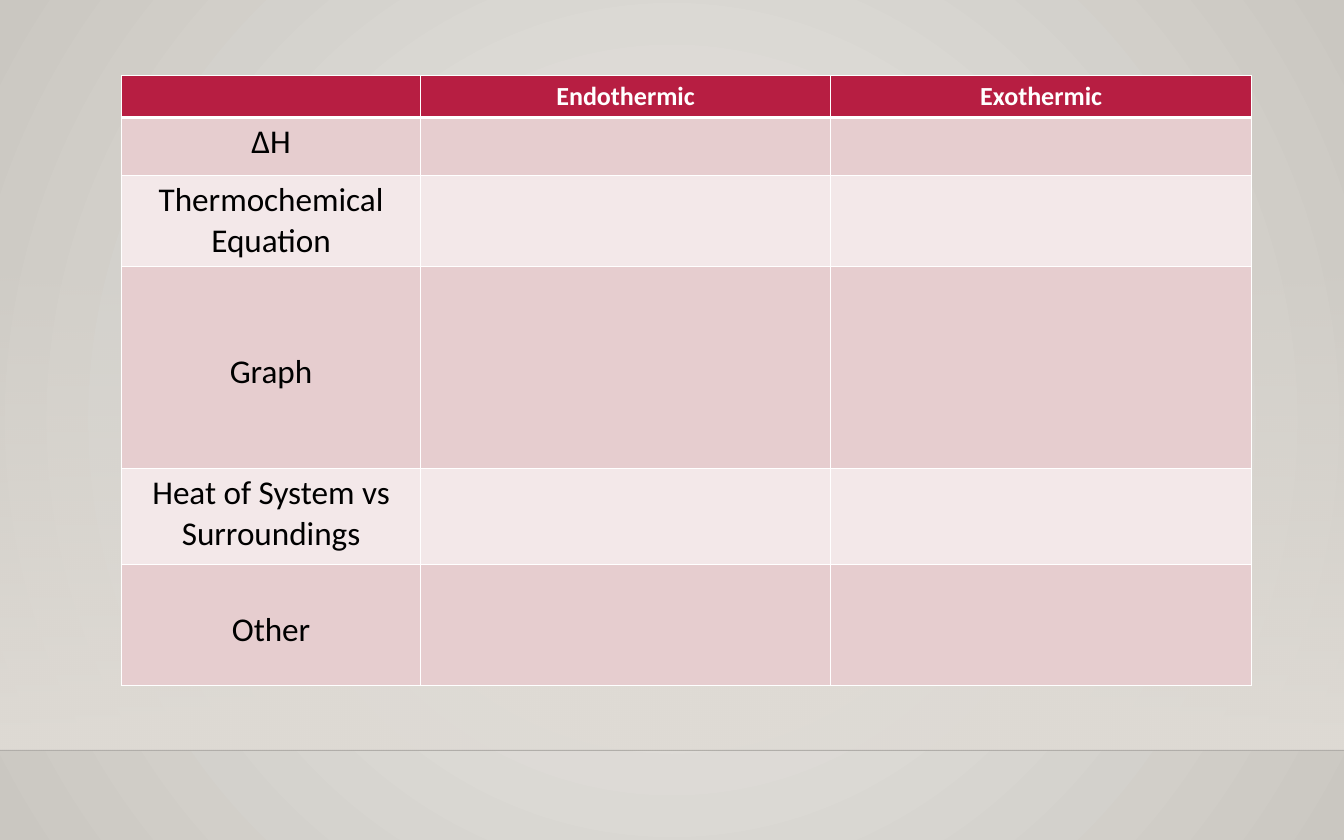
from pptx import Presentation
from pptx.dml.color import RGBColor
from pptx.enum import shapes, text
from pptx.oxml import parse_xml
from pptx.oxml import ns
from pptx.util import Pt

WIDTH, HEIGHT = 1134, 708.5
FLOOR = 632.9
COLUMNS = [252, 346.3, 355]
ROWS = [34.56, 48.96, 66.96, 169.92, 81.36, 102.24]
LINE_HEIGHT = 34
# Row label and how many lines it sits below the top of its cell
LABELS = [("∆H", 0), ("Thermochemical Equation", 0), ("Graph", 2),
          ("Heat of System vs Surroundings", 0), ("Other", 1)]


def rgb(value):
    return RGBColor.from_string(value)


def element(xml):
    """Parse a fragment with the a: prefix whose outer tag is not self-closing."""
    return parse_xml(xml.replace(">", f" {ns.nsdecls('a')}>", 1))


class Slide:
    font = "Calibri"
    header, bands = "B71E42", ("E6CDCF", "F3E8E9")

    def __init__(self, prs):
        self.s = prs.slides.add_slide(prs.slide_layouts[6])

    def gradient(self, parent, stops, direction):
        """Replace the solid fill in parent with (position, colour, opacity) stops."""
        gs = "".join(
            f'<a:gs pos="{pos * 1000}"><a:srgbClr val="{color}">'
            f'<a:alpha val="{alpha * 1000}"/></a:srgbClr></a:gs>'
            for pos, color, alpha in stops)
        fill = element(f"<a:gradFill><a:gsLst>{gs}</a:gsLst>{direction}</a:gradFill>")
        parent.replace(parent.find(ns.qn("a:solidFill")), fill)

    def background(self, inner, outer):
        self.s.background.fill.solid()
        self.gradient(
            self.s.element.find(".//" + ns.qn("p:bgPr")),
            [(0, inner, 100), (100, outer, 100)],
            '<a:path path="circle">'
            '<a:fillToRect l="50000" t="50000" r="50000" b="50000"/></a:path>')

    def fade(self, x, y, w, h, color):
        """Rectangle that fades from clear at the top to solid at the bottom."""
        sp = self.s.shapes.add_shape(
            shapes.MSO_SHAPE.RECTANGLE, Pt(x), Pt(y), Pt(w), Pt(h))
        sp.shadow.inherit = False
        sp.line.fill.background()
        sp.fill.solid()
        self.gradient(sp.element.spPr, [(0, color, 0), (100, color, 100)],
                      '<a:lin ang="5400000" scaled="0"/>')

    def rule(self, x1, y1, x2, y2, color, opacity):
        line = self.s.shapes.add_connector(
            shapes.MSO_CONNECTOR.STRAIGHT, Pt(x1), Pt(y1), Pt(x2), Pt(y2))
        line.line.width = Pt(1)
        line.line.color.rgb = rgb(color)
        spPr = line.line._get_or_add_ln().getparent()
        clr = spPr.find(".//" + ns.qn("a:srgbClr"))
        clr.append(element(f'<a:alpha val="{opacity * 1000}"></a:alpha>'))
        spPr.append(element("<a:effectLst></a:effectLst>"))

    def table(self, x, y, columns, rows):
        table = self.s.shapes.add_table(
            len(rows), len(columns), Pt(x), Pt(y),
            Pt(sum(columns)), Pt(sum(rows))).table
        for column, width in zip(table.columns, columns):
            column.width = Pt(width)
        for i, (row, height) in enumerate(zip(table.rows, rows)):
            row.height = Pt(height)
            for cell in row.cells:
                self.borders(cell, top=3 if i == 1 else 1, bottom=3 if i == 0 else 1)
                cell.fill.solid()
                cell.fill.fore_color.rgb = rgb(self.bands[(i - 1) % 2] if i else self.header)
        return table

    def borders(self, cell, top, bottom):
        tcPr = cell._tc.get_or_add_tcPr()
        for side, width in zip("LRTB", (1, 1, top, bottom)):
            tcPr.append(element(
                f'<a:ln{side} w="{Pt(width)}"><a:solidFill>'
                f'<a:srgbClr val="FFFFFF"/></a:solidFill></a:ln{side}>'))

    def label(self, cell, words, size, color, bold=False, lines_down=0):
        cell.margin_left = cell.margin_right = Pt(8.64)
        cell.margin_top = Pt(4.32 + lines_down * LINE_HEIGHT)
        cell.margin_bottom = Pt(4.32)
        p = cell.text_frame.paragraphs[0]
        p.alignment = text.PP_ALIGN.CENTER
        r = p.add_run()
        r.text = words
        r.font.name, r.font.size, r.font.bold = self.font, Pt(size), bold
        r.font.color.rgb = rgb(color)


def main():
    prs = Presentation()
    prs.slide_width, prs.slide_height = Pt(WIDTH), Pt(HEIGHT)
    slide = Slide(prs)
    slide.background("ECEAE7", "CAC7C1")
    slide.fade(0, 208.8, WIDTH, FLOOR - 208.8, "DFDBD5")
    slide.rule(0, FLOOR, WIDTH, FLOOR, "000001", 20)

    table = slide.table(102.7, 63.4, COLUMNS, ROWS)
    for j, words in enumerate(["Endothermic", "Exothermic"], 1):
        slide.label(table.cell(0, j), words, 22, "FFFFFF", bold=True)
    for i, (words, lines_down) in enumerate(LABELS, 1):
        slide.label(table.cell(i, 0), words, 28, "000000", lines_down=lines_down)
    prs.save("out.pptx")


if __name__ == "__main__":
    main()
